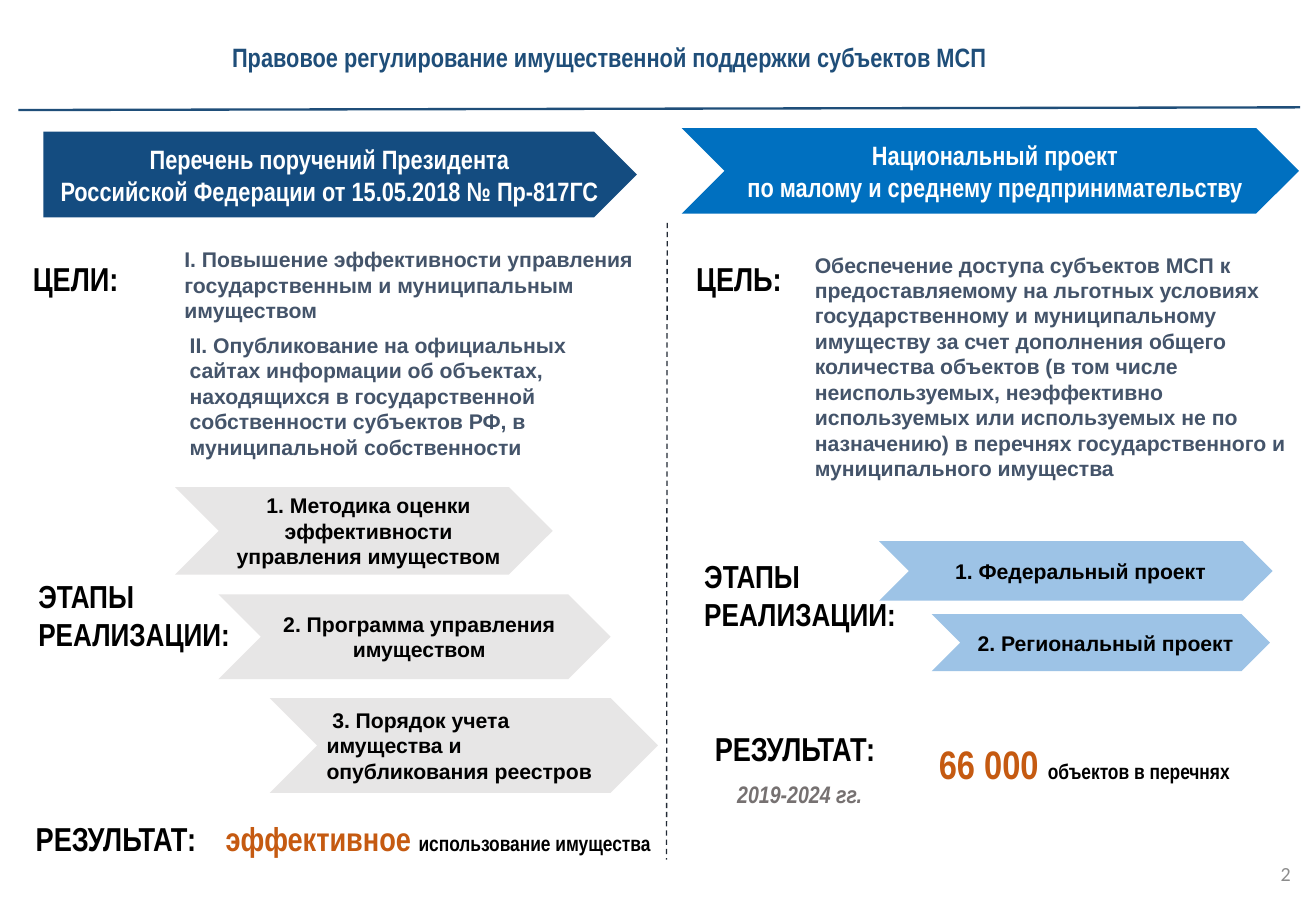
from dataclasses import dataclass

import pptx
import pptx.dml.color
import pptx.enum.dml
import pptx.enum.shapes
import pptx.enum.text
import pptx.oxml
import pptx.oxml.ns
import pptx.util
from lxml import etree

W, H = 13.78, 9.45
NARROW, ARIAL = "Arial Narrow", "Arial"
NAVY, BLACK, SLATE, RUST = "1F4E79", "000000", "44546A", "C55A11"
GRAY, SKY, WHITE = "E7E6E6", "9DC3E6", "FFFFFF"
LEFT = pptx.enum.text.PP_ALIGN.LEFT
CENTER = pptx.enum.text.PP_ALIGN.CENTER
RIGHT = pptx.enum.text.PP_ALIGN.RIGHT
MIDDLE = pptx.enum.text.MSO_ANCHOR.MIDDLE
CHEVRON = pptx.enum.shapes.MSO_SHAPE.CHEVRON
PENTAGON = pptx.enum.shapes.MSO_SHAPE.PENTAGON


@dataclass(frozen=True)
class Style:
    size: float
    color: str = BLACK
    font: str = NARROW
    bold: bool = True
    italic: bool = False


HEADING = Style(25)
STAGES = Style(24)
GOAL = Style(16, SLATE, ARIAL)
STEP = Style(16, BLACK, ARIAL)
BANNER = Style(20, WHITE)
NOTE = Style(16)


@dataclass(frozen=True)
class Label:
    box: tuple[float, float, float, float]
    text: str
    style: Style
    align: pptx.enum.text.PP_ALIGN = LEFT
    tail: str = ""


@dataclass(frozen=True)
class Arrow:
    box: tuple[float, float, float, float]
    text: str
    fill: str
    style: Style = STEP
    kind: pptx.enum.shapes.MSO_SHAPE = CHEVRON
    align: pptx.enum.text.PP_ALIGN = CENTER
    indent: float = 0


@dataclass(frozen=True)
class Rule:
    ends: tuple[float, float, float, float]
    color: str
    width: float
    dashed: bool = False


RULES = [
    Rule((1.4, 12.2, 98.8, 11.9), NAVY, 1.75),
    Rule((50.7, 24.7, 50.65, 95.3), "222A35", 1, True),
]

ARROWS = [
    Arrow((3.3, 14.6, 45.1, 9.5),
          "Перечень поручений Президента\nРоссийской Федерации от 15.05.2018 № Пр-817ГС",
          "144C80", BANNER, PENTAGON),
    Arrow((51.8, 14.2, 46.9, 9.5),
          "Национальный проект\nпо малому и среднему предпринимательству",
          "0070C0", BANNER),
    Arrow((13.3, 54, 28.7, 9.7), "1. Методика оценки эффективности управления имуществом", GRAY),
    Arrow((16.6, 65.9, 29.8, 9.4), "2. Программа управления имуществом", GRAY),
    Arrow((20.5, 77.4, 29.5, 10.5), "3. Порядок учета имущества и опубликования реестров",
          GRAY, align=LEFT, indent=0.06),
    Arrow((66.8, 60, 29.9, 6.6), "1. Федеральный проект", SKY),
    Arrow((70.8, 68.1, 25.7, 6.3), "2. Региональный проект", SKY),
]

LABELS = [
    Label((0, 28.1, 11.5, 5.5), "ЦЕЛИ:", HEADING, CENTER),
    Label((13.3, 26.8, 38.8, 9.6),
          "I. Повышение эффективности управления государственным и муниципальным имуществом", GOAL),
    Label((13.7, 36.3, 34, 15.3),
          "II. Опубликование на официальных сайтах информации об объектах, находящихся "
          "в государственной собственности субъектов РФ, в муниципальной собственности", GOAL),
    Label((2.2, 63.4, 19.8, 9.6), "ЭТАПЫ РЕАЛИЗАЦИИ:", STAGES),
    Label((2, 90.2, 15.5, 5.5), "РЕЗУЛЬТАТ:", HEADING),
    Label((15.5, 90.2, 35.6, 5.5), "эффективное ", Style(25, RUST), CENTER,
          "использование имущества"),
    Label((50.9, 28.1, 10.5, 5.5), "ЦЕЛЬ:", HEADING, CENTER),
    Label((61.2, 27.4, 38.8, 26.7),
          "Обеспечение доступа субъектов МСП к предоставляемому на льготных условиях "
          "государственному и муниципальному имуществу за счет дополнения общего количества "
          "объектов (в том числе неиспользуемых, неэффективно используемых или используемых "
          "не по назначению) в перечнях государственного и муниципального имущества", GOAL),
    Label((52.8, 61.2, 19.8, 9.9), "ЭТАПЫ РЕАЛИЗАЦИИ:", STAGES),
    Label((53.6, 80.2, 15.5, 5.5), "РЕЗУЛЬТАТ:", HEADING),
    Label((55.3, 85.9, 11.5, 4.2), "2019-2024 гг.", Style(18, "767171", italic=True)),
    Label((64.8, 81.5, 35.2, 6.5), "66 000 ", Style(30, RUST), CENTER, "объектов в перечнях"),
    Label((76.3, 95, 22.5, 5), "2", Style(15.1, "8C8C8C", "Calibri", False), RIGHT),
]


def rgb(color: str) -> pptx.dml.color.RGBColor:
    return pptx.dml.color.RGBColor.from_string(color)


def place(box: tuple[float, float, float, float]) -> list[int]:
    return [pptx.util.Inches(v * side / 100) for v, side in zip(box, (W, H, W, H))]


def format_run(r, style: Style) -> None:
    r.font.name = style.font
    r.font.size = pptx.util.Pt(style.size)
    r.font.bold = style.bold
    r.font.italic = style.italic
    r.font.color.rgb = rgb(style.color)


def write(tf, text: str, style: Style, align: pptx.enum.text.PP_ALIGN) -> None:
    tf.text = text
    tf.word_wrap = True
    for p in tf.paragraphs:
        p.alignment = align
        for r in p.runs:
            format_run(r, style)


def set_margins(tf, left: float, top: float, right: float, bottom: float) -> None:
    tf.margin_left, tf.margin_top, tf.margin_right, tf.margin_bottom = map(
        pptx.util.Inches, (left, top, right, bottom))


def add_title(s, text: str) -> None:
    sp = s.shapes.title
    sp.left, sp.top, sp.width, sp.height = place((17.2, 2.5, 80.3, 7.6))
    tf = sp.text_frame
    write(tf, text, Style(20, NAVY), LEFT)
    tf.auto_size = pptx.enum.text.MSO_AUTO_SIZE.NONE
    tf.vertical_anchor = MIDDLE
    set_margins(tf, 0.06, 0.03, 0, 0.03)


def add_rule(s, rule: Rule) -> None:
    c = s.shapes.add_connector(pptx.enum.shapes.MSO_CONNECTOR.STRAIGHT, *place(rule.ends))
    c.line.color.rgb = rgb(rule.color)
    c.line.width = pptx.util.Pt(rule.width)
    if rule.dashed:
        c.line.dash_style = pptx.enum.dml.MSO_LINE.DASH
    etree.SubElement(c._element.spPr, pptx.oxml.ns.qn("a:effectLst"))


def add_arrow(s, arrow: Arrow) -> None:
    sp = s.shapes.add_shape(arrow.kind, *place(arrow.box))
    sp.shadow.inherit = False
    sp.fill.solid()
    sp.fill.fore_color.rgb = rgb(arrow.fill)
    sp.line.fill.background()
    tf = sp.text_frame
    write(tf, arrow.text, arrow.style, arrow.align)
    tf.vertical_anchor = MIDDLE
    set_margins(tf, 0.1, 0.1, 0.1 if arrow.kind == PENTAGON else 0, 0.1)
    if arrow.indent:
        pPr = tf.paragraphs[0]._p.get_or_add_pPr()
        pPr.set("indent", str(pptx.util.Inches(arrow.indent)))


def add_label(s, label: Label) -> None:
    tf = s.shapes.add_textbox(*place(label.box)).text_frame
    write(tf, label.text, label.style, label.align)
    if label.tail:
        r = tf.paragraphs[0].add_run()
        r.text = label.tail
        format_run(r, NOTE)


def main() -> None:
    prs = pptx.Presentation()
    prs.slide_width, prs.slide_height = pptx.util.Inches(W), pptx.util.Inches(H)
    s = prs.slides.add_slide(prs.slide_layouts[5])
    add_title(s, "Правовое регулирование имущественной поддержки субъектов МСП")
    for rule in RULES:
        add_rule(s, rule)
    for arrow in ARROWS:
        add_arrow(s, arrow)
    for label in LABELS:
        add_label(s, label)
    prs.save("out.pptx")


if __name__ == "__main__":
    main()
